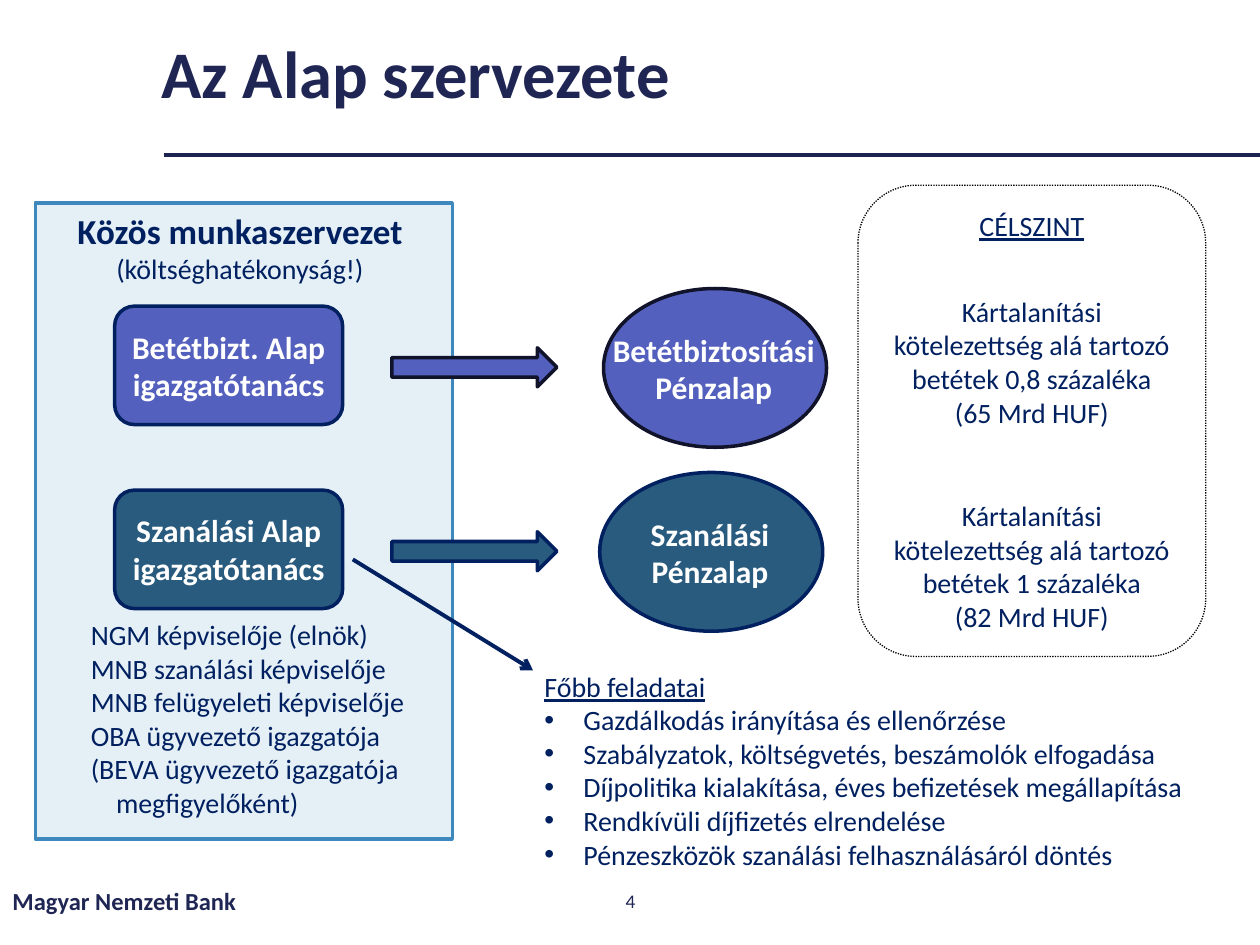
from dataclasses import dataclass, replace

from lxml.etree import SubElement
from pptx import Presentation
from pptx.dml.color import RGBColor
from pptx.enum.dml import MSO_LINE
from pptx.enum.shapes import MSO_CONNECTOR, MSO_SHAPE
from pptx.enum.text import MSO_ANCHOR, PP_ALIGN
from pptx.oxml.ns import qn
from pptx.util import Inches, Pt

# The grid has 100 columns and 75 rows on a 10 by 7.5 inch slide
WIDE, HIGH = Inches(10), Inches(7.5)
COLS, ROWS = 100, 75
STEP = 14.6  # rows between the two funds
FONT = "Calibri"
HEX = {
    "title": "202653", "rule": "1E2452", "navy": "002060", "dark": "10132A",
    "white": "FFFFFF", "black": "000000", "pale": "E5EFF6", "edge": "3E88BE",
    "teal": "295B7E", "violet": "5460BD",
}


@dataclass(frozen=True)
class Box:
    left: float
    top: float
    wide: float
    high: float

    def down(self, rows: float) -> "Box":
        return replace(self, top=self.top + rows)

    def place(self) -> tuple:
        return (*spot(self.left, self.top), *spot(self.wide, self.high))


@dataclass(frozen=True)
class Para:
    text: str
    size: float = 16
    color: str = "navy"
    bold: bool = False
    under: bool = False
    align: PP_ALIGN = PP_ALIGN.LEFT
    after: float = 0
    hang: float = 0  # hanging indent in inches
    dot: bool = False
    lead: float = 1


@dataclass(frozen=True)
class Fund:
    board: str
    pool: str
    fill: str
    edge: str  # line of the arrow and the ellipse
    row: float  # rows below the upper fund
    left: float  # left column of the ellipse


def spot(col: float, row: float) -> tuple:
    return round(col * WIDE / COLS), round(row * HIGH / ROWS)


def tint(name: str) -> RGBColor:
    return RGBColor.from_string(HEX[name])


def write(frame, paras: list, anchor=MSO_ANCHOR.TOP) -> None:
    frame.word_wrap = True
    frame.vertical_anchor = anchor
    for num, item in enumerate(paras):
        para = frame.add_paragraph() if num else frame.paragraphs[0]
        para.text = item.text
        para.alignment = item.align
        para.line_spacing = item.lead
        para.space_after = Pt(item.after)
        props = para._p.get_or_add_pPr()
        if item.hang:
            props.set("marL", str(Inches(item.hang)))
            props.set("indent", str(-Inches(item.hang)))
        if item.dot:
            SubElement(props, qn("a:buFont"), typeface="Arial")
            SubElement(props, qn("a:buChar"), char="•")
        for run in para.runs:
            font = run.font
            font.name, font.size = FONT, Pt(item.size)
            font.bold, font.underline = item.bold, item.under
            font.color.rgb = tint(item.color)


def label(shapes, box: Box, paras: list, anchor=MSO_ANCHOR.TOP) -> None:
    write(shapes.add_textbox(*box.place()).text_frame, paras, anchor)


def form(shapes, kind, box: Box, fill: str = "", edge: str = "", width: float = 2):
    shape = shapes.add_shape(kind, *box.place())
    shape.shadow.inherit = False
    if fill:
        shape.fill.solid()
        shape.fill.fore_color.rgb = tint(fill)
    else:
        shape.fill.background()
    if edge:
        shape.line.color.rgb = tint(edge)
        shape.line.width = Pt(width)
    else:
        shape.line.fill.background()
    return shape


def line(shapes, start: tuple, end: tuple, color: str, head: bool = False) -> None:
    link = shapes.add_connector(MSO_CONNECTOR.STRAIGHT, *spot(*start), *spot(*end))
    link.line.color.rgb = tint(color)
    link.line.width = Pt(2.25)
    if head:
        SubElement(link.line._get_or_add_ln(), qn("a:tailEnd"), type="arrow")
    SubElement(link._element.spPr, qn("a:effectLst"))


def badge(shapes, kind, box: Box, text: str, area: Box, fill: str, edge: str) -> None:
    group = shapes.add_group_shape().shapes
    form(group, kind, box, fill, edge)
    label(group, area, [Para(text, 18, "white", True, align=PP_ALIGN.CENTER)])


FUNDS = [
    Fund("Szanálási Alap igazgatótanács", "Szanálási Pénzalap",
         "teal", "navy", STEP, 47.6),
    Fund("Betétbizt. Alap igazgatótanács", "Betétbiztosítási Pénzalap",
         "violet", "dark", 0, 47.9),
]
MEMBERS = [
    "NGM képviselője (elnök)",
    "MNB szanálási képviselője",
    "MNB felügyeleti képviselője",
    "OBA ügyvezető igazgatója",
]
TASKS = [
    "Gazdálkodás irányítása és ellenőrzése",
    "Szabályzatok, költségvetés, beszámolók elfogadása",
    "Díjpolitika kialakítása, éves befizetések megállapítása",
    "Rendkívüli díjfizetés elrendelése",
    "Pénzeszközök szanálási felhasználásáról döntés",
]
GOAL = "Kártalanítási kötelezettség alá tartozó betétek {} százaléka"


def main() -> None:
    deck = Presentation()
    deck.slide_width, deck.slide_height = WIDE, HIGH
    shapes = deck.slides.add_slide(deck.slide_layouts[6]).shapes
    mid, round_box = PP_ALIGN.CENTER, MSO_SHAPE.ROUNDED_RECTANGLE

    # Title, rule and footer
    line(shapes, (13, 12.3), (COLS, 12.3), "rule")
    for box, para in [
        (Box(11.8, 2, 81.9, 8.3),
         Para("Az Alap szervezete", 38, "title", True, lead=0.9)),
        (Box(0, 69.5, 33.8, 4), Para("Magyar Nemzeti Bank", 14, "title", True)),
        (Box(38.8, 69.5, 22.5, 4), Para("4", 11, "title", align=mid)),
    ]:
        label(shapes, box, [para], MSO_ANCHOR.MIDDLE)

    # Shared office panel
    form(shapes, MSO_SHAPE.RECTANGLE, Box(2.8, 16.1, 33.1, 50.5), "pale", "edge")
    label(shapes, Box(1.2, 16.1, 35.7, 7.1), [
        Para("Közös munkaszervezet", 20, bold=True, align=mid),
        Para("(költséghatékonyság!)", align=mid),
    ])

    # Boards, arrows and money pools
    for fund in FUNDS:
        badge(shapes, round_box, Box(9.1, 24.3, 18.1, 9.4).down(fund.row),
              fund.board, Box(9.1, 25.5, 18.1, 7.1).down(fund.row),
              fund.fill, "navy")
    for fund in FUNDS:
        arrow = form(shapes, MSO_SHAPE.DOWN_ARROW,
                     Box(36.1, 22.6, 3.1, 13.1).down(fund.row),
                     fund.fill, fund.edge)
        arrow.rotation = 270
    for fund in FUNDS:
        badge(shapes, MSO_SHAPE.OVAL,
              Box(fund.left, 22.9, 17.7, 12.6).down(fund.row), fund.pool,
              Box(fund.left - 0.3, 25.75, 18.1, 7.1).down(fund.row),
              fund.fill, fund.edge)

    # Board members
    names = form(shapes, round_box, Box(5.3, 47.6, 28.9, 19))
    write(names.text_frame, [Para(name) for name in MEMBERS] + [
        Para("(BEVA ügyvezető igazgatója megfigyelőként)", hang=0.2)])

    # Main tasks
    line(shapes, (28, 44.4), (42.3, 53.2), "navy", head=True)
    tasks = form(shapes, round_box, Box(41.3, 51.7, 55.1, 19))
    write(tasks.text_frame, [Para("Főbb feladatai", under=True)] + [
        Para(task, hang=0.31, dot=True) for task in TASKS])

    # Target levels
    goals = form(shapes, round_box, Box(68.1, 14.7, 27.6, 37.4), "", "black", 0.75)
    goals.line.dash_style = MSO_LINE.ROUND_DOT
    write(goals.text_frame, [
        Para("CÉLSZINT", under=True, align=mid, after=30),
        Para(GOAL.format("0,8"), align=mid),
        Para("(65 Mrd HUF)", align=mid, after=40),
        Para(GOAL.format("1"), align=mid),
        Para("(82 Mrd HUF)", align=mid),
    ])

    deck.save("out.pptx")


if __name__ == "__main__":
    main()
